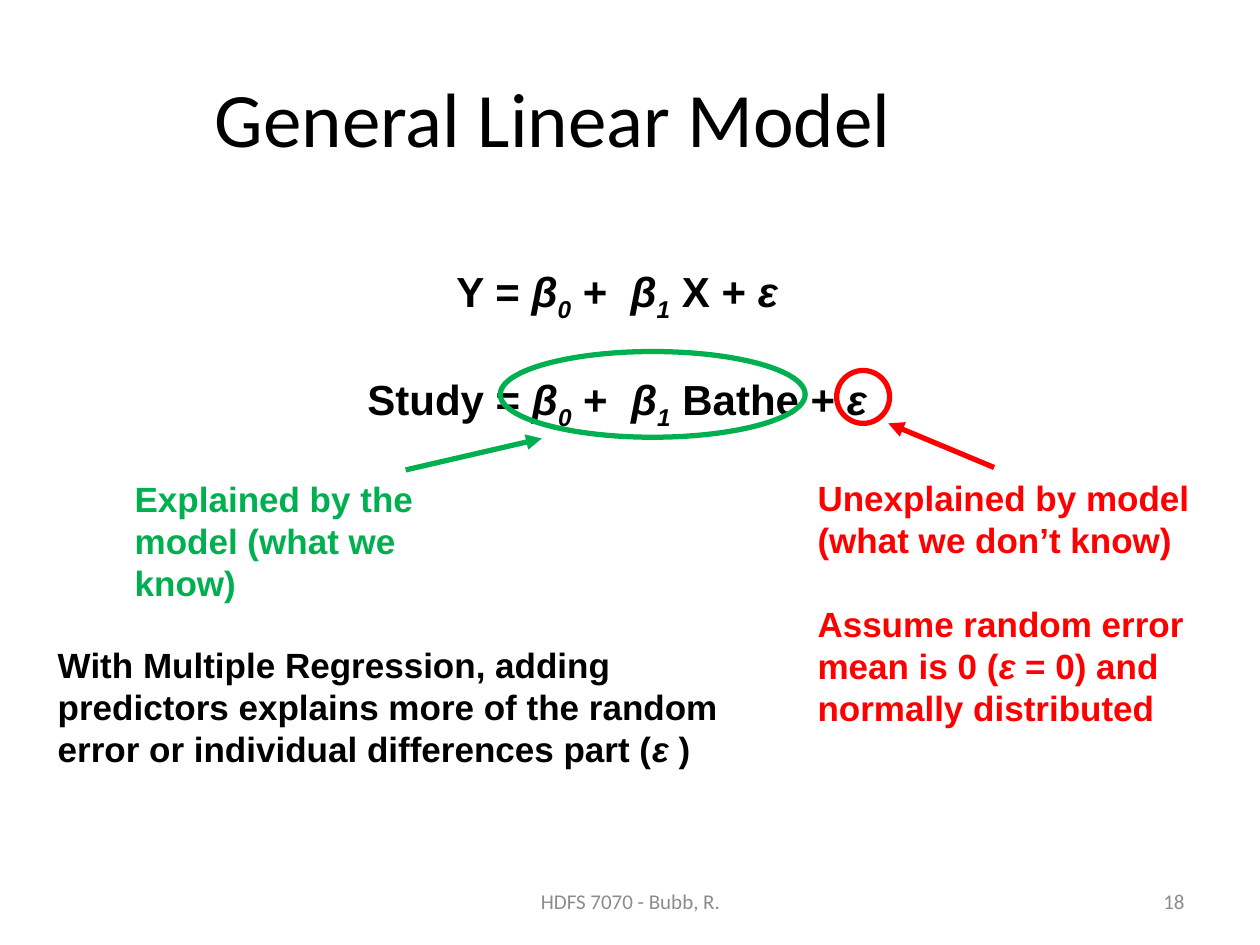
from dataclasses import dataclass

from lxml import etree
from pptx import Presentation
from pptx import util as u
from pptx.dml.color import RGBColor
from pptx.enum import shapes, text
from pptx.oxml import ns

W, H = 10, 7.5
COLORS = {"black": "000000", "gray": "8C8C8C", "known": "00B050", "unknown": "FF0000"}
LEFT, CENTER, RIGHT = text.PP_ALIGN.LEFT, text.PP_ALIGN.CENTER, text.PP_ALIGN.RIGHT
TOP, MIDDLE = text.MSO_ANCHOR.TOP, text.MSO_ANCHOR.MIDDLE

Run = tuple[str, str]  # wording and style: "" plain, "i" italic, "sub" italic subscript


@dataclass
class Box:
    """Position and size in percent of the slide's width and height."""
    x: float
    y: float
    w: float
    h: float

    def emu(self) -> tuple[int, int, int, int]:
        return across(self.x), down(self.y), across(self.w), down(self.h)


@dataclass
class Label:
    box: Box
    paragraphs: list[list[Run]]
    size: int
    color: str = "black"
    font: str = "Arial"
    bold: bool = True
    align: text.PP_ALIGN = LEFT
    anchor: text.MSO_ANCHOR = TOP
    gap: int = 0


@dataclass
class Mark:
    """A ring around a part of the equation, and the arrow that leads to it."""
    ring: Box
    start: tuple[float, float]
    end: tuple[float, float]
    color: str


def across(share: float) -> int:
    return u.Inches(W * share / 100)


def down(share: float) -> int:
    return u.Inches(H * share / 100)


def rgb(name: str) -> RGBColor:
    return RGBColor.from_string(COLORS[name])


def equation(outcome: str, predictor: str) -> list[Run]:
    return [(f"{outcome} = ", ""), ("β", "i"), ("0", "sub"), (" +  ", ""),
            ("β", "i"), ("1", "sub"), (f" {predictor} + ", ""), ("ε ", "i")]


def add_label(slide, label: Label) -> None:
    tf = slide.shapes.add_textbox(*label.box.emu()).text_frame
    tf.word_wrap = True
    tf.vertical_anchor = label.anchor
    for i, runs in enumerate(label.paragraphs):
        p = tf.add_paragraph() if i else tf.paragraphs[0]
        p.alignment = label.align
        if i:
            p.space_before = u.Pt(label.gap)
        p.font.name, p.font.size, p.font.bold = label.font, u.Pt(label.size), label.bold
        p.font.color.rgb = rgb(label.color)
        for wording, style in runs:
            r = p.add_run()
            r.text = wording
            if style:
                r.font.italic = True
            if style == "sub":
                r._r.get_or_add_rPr().set("baseline", "-25000")


def add_mark(slide, mark: Mark) -> None:
    sp = slide.shapes.add_shape(shapes.MSO_SHAPE.OVAL, *mark.ring.emu())
    sp.shadow.inherit = False
    sp.fill.background()
    (x1, y1), (x2, y2) = mark.start, mark.end
    arrow = slide.shapes.add_connector(
        shapes.MSO_CONNECTOR.STRAIGHT, across(x1), down(y1), across(x2), down(y2))
    for outline in (sp.line, arrow.line):
        outline.color.rgb = rgb(mark.color)
        outline.width = u.Pt(3)
    sp_pr = arrow._element.spPr
    etree.SubElement(sp_pr.find(ns.qn("a:ln")), ns.qn("a:tailEnd"), type="triangle")
    etree.SubElement(sp_pr, ns.qn("a:effectLst"))


LABELS = [
    # Title
    Label(Box(5, 4, 77.8, 16.67), [[("General Linear Model", "")]], 44,
          font="Calibri", bold=False, align=CENTER, anchor=MIDDLE),
    # Footer and slide number
    Label(Box(34.2, 92.67, 31.7, 5.33), [[("HDFS 7070 - Bubb, R.", "")]], 12, "gray",
          font="Calibri", bold=False, align=CENTER, anchor=MIDDLE),
    Label(Box(71.7, 92.67, 23.3, 5.33), [[("18", "")]], 12, "gray",
          font="Calibri", bold=False, align=RIGHT, anchor=MIDDLE),
    # General equation and its example
    Label(Box(0.3, 27.47, 98.3, 22.93),
          [equation("Y", "X"), equation("Study", "Bathe")], 24, align=CENTER, gap=29),
    # Explanations
    Label(Box(9.7, 49.87, 30.8, 10.27),
          [[("Explained by the model (what we know)", "")]], 20, "known"),
    Label(Box(63.9, 49.73, 31.7, 28.27),
          [[("Unexplained by model (what we don’t know)", "")],
           [("Assume random error mean is 0 (", ""), ("ε", "i"),
            (" = 0) and normally distributed", "")]], 20, "unknown", gap=24),
    Label(Box(3.6, 67.47, 56.7, 14.8),
          [[("With Multiple Regression, adding predictors explains more of the random "
             "error or individual differences part (", ""), ("ε ", "i"), (")", "")]], 20),
]

MARKS = [
    Mark(Box(39.7, 37.2, 24.2, 9.07), (32.2, 49.73), (43, 46.4), "known"),
    Mark(Box(66.4, 39.2, 4.2, 5.6), (78.9, 49.47), (70.5, 44.8), "unknown"),
]


def main() -> None:
    prs = Presentation()
    prs.slide_width, prs.slide_height = u.Inches(W), u.Inches(H)
    s = prs.slides.add_slide(prs.slide_layouts[6])
    for label in LABELS:
        add_label(s, label)
    for mark in MARKS:
        add_mark(s, mark)
    prs.save("out.pptx")


if __name__ == "__main__":
    main()
